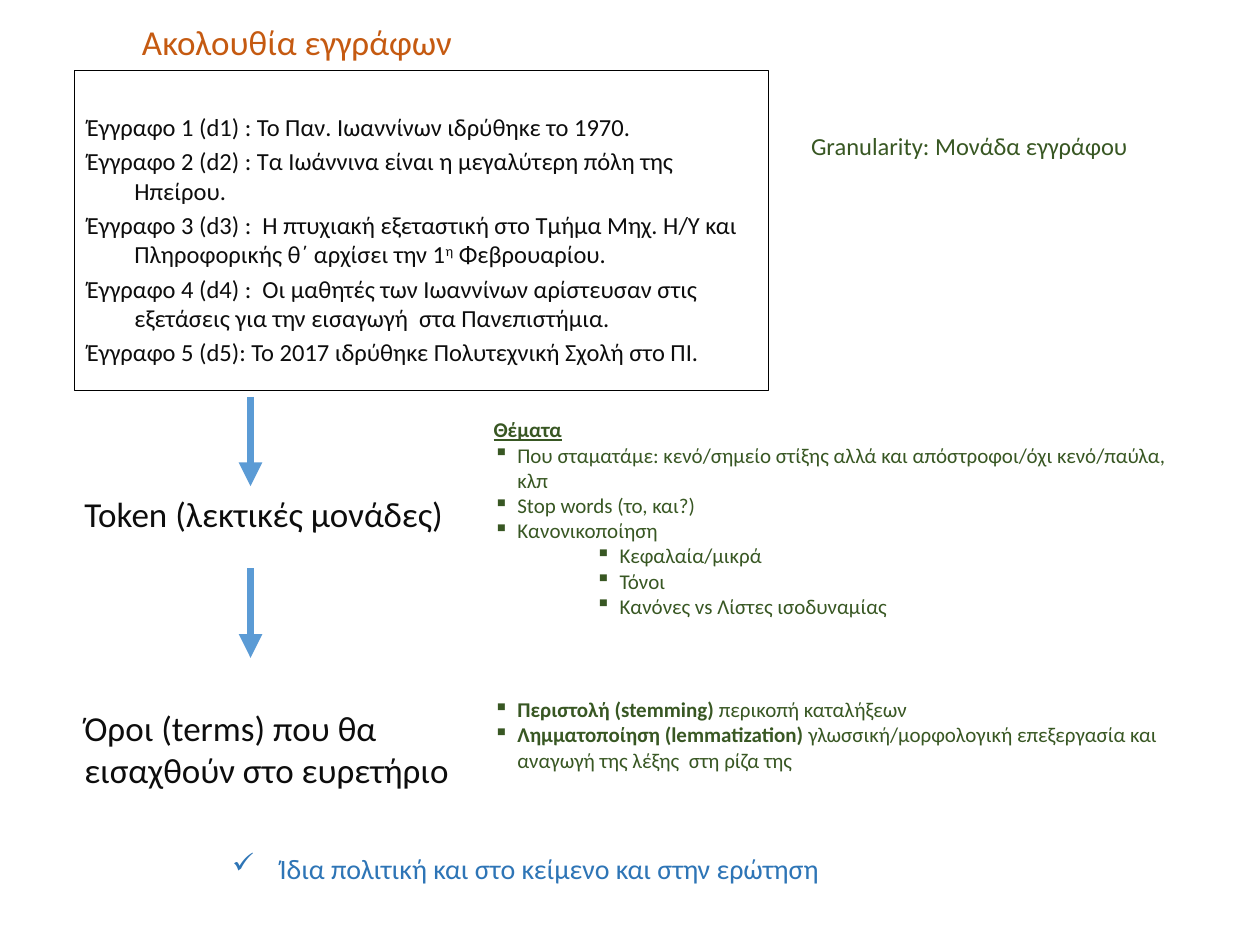
from collections import namedtuple

from lxml import etree
from pptx import Presentation
from pptx import util as u
from pptx.dml.color import RGBColor
from pptx.enum import shapes, text
from pptx.oxml.ns import qn

Box = namedtuple("Box", "left top width height")  # centimetres


class Theme:
    font = "Calibri"
    ink, black = "0D0D0D", "000000"
    title, note, policy, arrow = "C55A11", "385723", "2E75B6", "5B9BD5"
    heading_size, policy_size, body_size, note_size = 20, 16, 14, 12
    arrow_width, frame_width = 4.5, 0.75


def part(box, left, top, width, height):
    """A box placed relative to the corner of another one."""
    return Box(box.left + left, box.top + top, width, height)


def lengths(box):
    return [u.Cm(value) for value in box]


def add_paragraph(frame, spans, size, color, first=False):
    """Each span is a (text, style) pair; style may hold b, u and sup."""
    para = frame.paragraphs[0] if first else frame.add_paragraph()
    for words, style in spans:
        span = para.add_run()
        span.text = words
        span.font.name = Theme.font
        span.font.size = u.Pt(size)
        span.font.color.rgb = RGBColor.from_string(color)
        span.font.bold = "b" in style
        span.font.underline = "u" in style
        if "sup" in style:
            span._r.get_or_add_rPr().set("baseline", "30000")
    return para


def set_indent(para, margin, hanging, bullet=None):
    properties = para._p.get_or_add_pPr()
    properties.set("marL", str(u.Cm(margin)))
    properties.set("indent", str(-u.Cm(hanging)))
    if bullet:
        etree.SubElement(properties, qn("a:buChar")).set("char", bullet)


def add_text_box(page, box):
    frame = page.shapes.add_textbox(*lengths(box)).text_frame
    frame.word_wrap = True
    return frame


def add_label(page, box, words, size, color, centred=False):
    frame = add_text_box(page, box)
    para = add_paragraph(frame, [(words, ())], size, color, first=True)
    if centred:
        para.alignment = text.PP_ALIGN.CENTER
    return para


def add_arrow(page, left, top, length):
    arrow = page.shapes.add_connector(
        shapes.MSO_CONNECTOR.STRAIGHT,
        u.Cm(left), u.Cm(top), u.Cm(left), u.Cm(top + length))
    arrow.line.color.rgb = RGBColor.from_string(Theme.arrow)
    arrow.line.width = u.Pt(Theme.arrow_width)
    etree.SubElement(arrow.line._get_or_add_ln(), qn("a:tailEnd")).set("type", "triangle")
    etree.SubElement(arrow._element.spPr, qn("a:effectLst"))


def add_documents(page, box):
    """Title, framed list of documents and the remark on granularity."""
    add_label(page, part(box, -2.01, -1.14, 13, 1.12), "Ακολουθία εγγράφων",
              Theme.heading_size, Theme.title, centred=True)
    frame_box = page.shapes.add_shape(shapes.MSO_SHAPE.RECTANGLE, *lengths(box))
    frame_box.shadow.inherit = False
    frame_box.fill.background()
    frame_box.line.color.rgb = RGBColor.from_string(Theme.black)
    frame_box.line.width = u.Pt(Theme.frame_width)
    frame = frame_box.text_frame
    frame.word_wrap = True
    frame.vertical_anchor = text.MSO_ANCHOR.TOP
    frame.margin_top = u.Cm(0.84)
    documents = [
        [("Έγγραφο 1 (d1) : Το Παν. Ιωαννίνων ιδρύθηκε το 1970.", ())],
        [("Έγγραφο 2 (d2) : Τα Ιωάννινα είναι η μεγαλύτερη πόλη της Ηπείρου.", ())],
        [("Έγγραφο 3 (d3) :  Η πτυχιακή εξεταστική στο Τμήμα Μηχ. Η/Υ και "
          "Πληροφορικής θ΄ αρχίσει την 1", ()), ("η", ("sup",)), (" Φεβρουαρίου.", ())],
        [("Έγγραφο 4 (d4) :  Οι μαθητές των Ιωαννίνων αρίστευσαν στις "
          "εξετάσεις για την εισαγωγή  στα Πανεπιστήμια.", ())],
        [("Έγγραφο 5 (d5): Το 2017 ιδρύθηκε Πολυτεχνική Σχολή στο ΠΙ.", ())],
    ]
    for index, spans in enumerate(documents):
        para = add_paragraph(frame, spans, Theme.body_size, Theme.ink, first=index == 0)
        para.alignment = text.PP_ALIGN.LEFT
        para.space_before = u.Pt(2.75 if index else 0)
        set_indent(para, 0.96, 0.96)
    add_label(page, part(box, 14.6, 1.09, 8.41, 0.86), "Granularity: Μονάδα εγγράφου",
              Theme.body_size, Theme.note)


def add_steps(page, box):
    """Arrows leading from the documents to tokens and on to terms."""
    for top in (0, 3.46):
        add_arrow(page, box.left + 3.6, box.top + top, 1.8)
    add_label(page, part(box, 0, 1.8, box.width, 1.12), "Token (λεκτικές μονάδες)",
              Theme.heading_size, Theme.ink)
    add_label(page, part(box, 0, 6.12, box.width, 1.96),
              "Όροι (terms) που θα εισαχθούν στο ευρετήριο",
              Theme.heading_size, Theme.ink)


def add_notes(page, box, items):
    """Each item is a (level, spans) pair; level None has no bullet."""
    margins = {0: 0.48, 1: 2.54}
    frame = add_text_box(page, box)
    for index, (level, spans) in enumerate(items):
        para = add_paragraph(frame, spans, Theme.note_size, Theme.note, first=index == 0)
        if level is not None:
            para.level = level
            set_indent(para, margins[level], 0.48, "▪")


def add_policy(page, box):
    para = add_label(page, box, "Ίδια πολιτική και στο κείμενο και στην ερώτηση",
                     Theme.policy_size, Theme.policy, centred=True)
    set_indent(para, 0.96, 0.96, "✓")


def main():
    deck = Presentation()
    deck.slide_width, deck.slide_height = u.Cm(25.4), u.Cm(19.05)
    page = deck.slides.add_slide(deck.slide_layouts[6])

    add_documents(page, Box(1.5, 1.42, 14, 6.45))
    add_steps(page, Box(1.45, 8, 8, 8.08))

    # Token issues
    issues = [(None, "Θέματα", ("b", "u")),
              (0, "Που σταματάμε: κενό/σημείο στίξης αλλά και "
                  "απόστροφοι/όχι κενό/παύλα,  κλπ", ()),
              (0, "Stop words (το, και?)", ()),
              (0, "Κανονικοποίηση", ()),
              (1, "Κεφαλαία/μικρά", ()),
              (1, "Τόνοι", ()),
              (1, "Κανόνες vs Λίστες ισοδυναμίας", ())]
    add_notes(page, Box(9.7, 8.28, 14.2, 4.37),
              [(level, [(words, style)]) for level, words, style in issues])

    # Term reduction
    methods = [("Περιστολή (stemming) ", "περικοπή καταλήξεων"),
               ("Λημματοποίηση (lemmatization) ",
                "γλωσσική/μορφολογική επεξεργασία και αναγωγή της λέξης  στη ρίζα της")]
    add_notes(page, Box(9.7, 13.92, 14.2, 1.8),
              [(0, [(name, ("b",)), (meaning, ())]) for name, meaning in methods])

    add_policy(page, Box(0.79, 17.04, 19.61, 0.94))
    deck.save("out.pptx")


if __name__ == "__main__":
    main()
